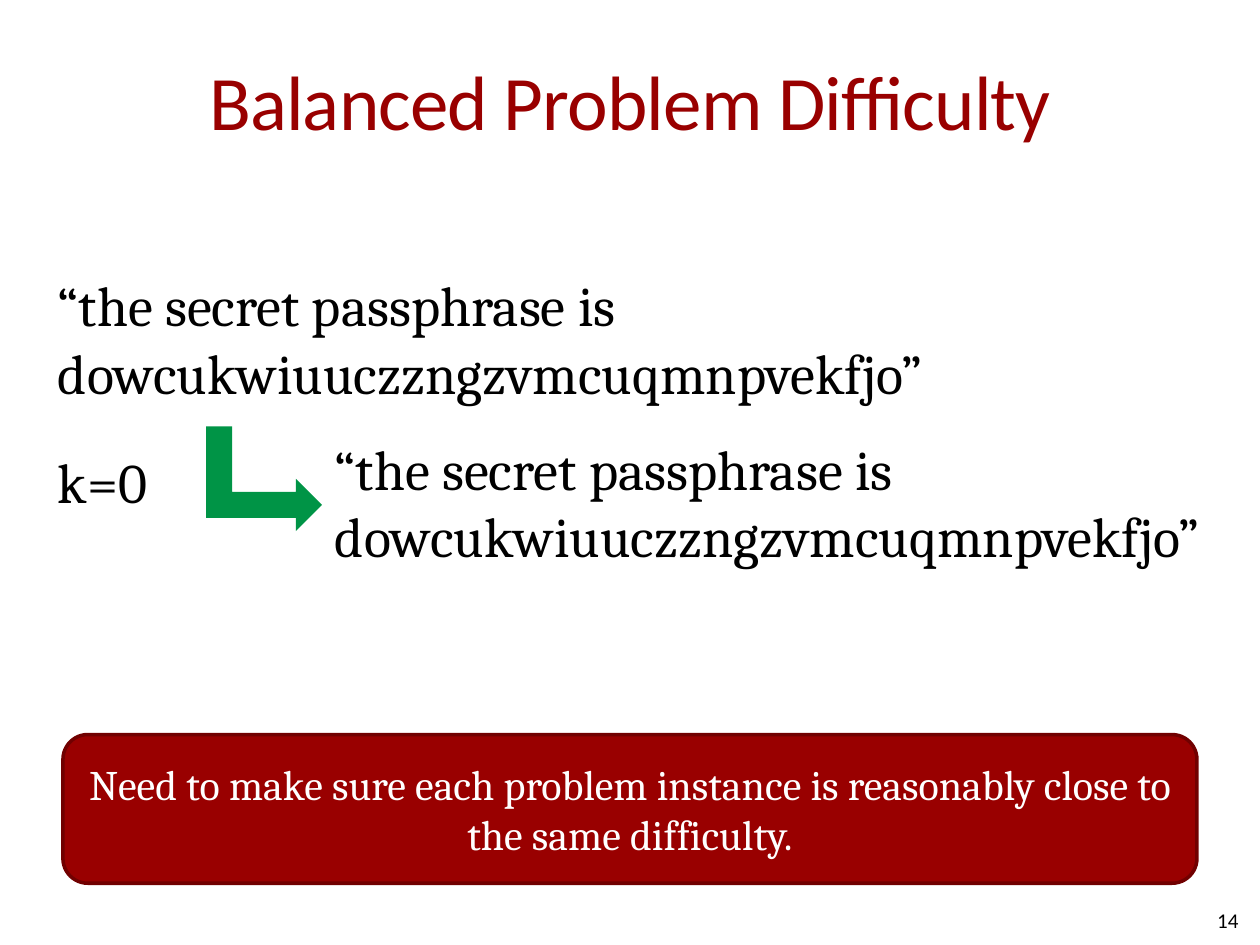
from pptx import Presentation
from pptx.dml.color import RGBColor
from pptx.enum.shapes import MSO_SHAPE as Shape
from pptx.enum.text import MSO_ANCHOR as Anchor, MSO_AUTO_SIZE as AutoSize, PP_ALIGN as Align
from pptx.util import Pt

TITLE = "Balanced Problem Difficulty"
PASSPHRASE = "“the secret passphrase is dowcukwiuuczzngzvmcuqmnpvekfjo”"
SHIFT = "k=0"
TAKEAWAY = "Need to make sure each problem instance is reasonably close to the same difficulty."
PAGE_NUMBER = "14"

RED, DARK_RED, GREEN = "990000", "710000", "009446"
BLACK, WHITE = "000000", "FFFFFF"

# left, top, width, height in points
TITLE_BOX = (36, 12.24, 648, 90)
PLAIN_BOX = (33.12, 154.8, 540, 77.76)
SHIFT_BOX = (33.12, 255.6, 52.56, 38.88)
SHIFTED_BOX = (184.32, 244.8, 533.52, 84.96)
ARROW_BOX = (120.96, 240.48, 59.76, 66.24)
TAKEAWAY_BOX = (36, 419.76, 648, 84.96)
PAGE_BOX = (540, 511.2, 167.76, 28.8)


def points(box):
    return [Pt(length) for length in box]


def rgb(color):
    return RGBColor.from_string(color)


def write(shape, text, size=32, font="Cambria", color=BLACK, align=Align.LEFT,
          anchor=Anchor.TOP, insets=(0, 0, 0, 0), wrap=True, spacing=None):
    """Fill a shape with one formatted paragraph; insets run left, top, right, bottom."""
    frame = shape.text_frame
    frame.auto_size = AutoSize.NONE
    frame.word_wrap = wrap
    frame.vertical_anchor = anchor
    (frame.margin_left, frame.margin_top,
     frame.margin_right, frame.margin_bottom) = points(insets)
    paragraph = frame.paragraphs[0]
    paragraph.alignment = align
    run = paragraph.add_run()
    run.text = text
    run.font.size = Pt(size)
    run.font.name = font
    run.font.color.rgb = rgb(color)
    if spacing is not None:
        run.font._element.set("spc", str(int(spacing * 100)))


def add_filled(slide, kind, box, fill, line=None):
    shape = slide.shapes.add_shape(kind, *points(box))
    shape.shadow.inherit = False
    shape.fill.solid()
    shape.fill.fore_color.rgb = rgb(fill)
    if line:
        shape.line.color.rgb = rgb(line)
        shape.line.width = Pt(2)
    else:
        shape.line.fill.background()
    return shape


def main():
    deck = Presentation()
    deck.slide_width, deck.slide_height = Pt(720), Pt(540)
    slide = deck.slides.add_slide(deck.slide_layouts[5])

    title = slide.shapes.title
    title.left, title.top, title.width, title.height = points(TITLE_BOX)
    write(title, TITLE, size=44, font="Calibri", color=RED, align=Align.CENTER,
          anchor=Anchor.MIDDLE, insets=(0, 3.6, 0, 3.6), spacing=-0.5)

    takeaway = add_filled(slide, Shape.ROUNDED_RECTANGLE, TAKEAWAY_BOX, RED, DARK_RED)
    write(takeaway, TAKEAWAY, size=24, color=WHITE, align=Align.CENTER, anchor=Anchor.MIDDLE)

    arrow = add_filled(slide, Shape.BENT_UP_ARROW, ARROW_BOX, GREEN)
    arrow.rotation = 90

    for box, text, options in [
        (PLAIN_BOX, PASSPHRASE, {}),
        (SHIFTED_BOX, PASSPHRASE, {"insets": (7.2, 3.6, 7.2, 3.6)}),
        (SHIFT_BOX, SHIFT, {"wrap": False}),
        (PAGE_BOX, PAGE_NUMBER, {"size": 12, "font": "Calibri", "align": Align.RIGHT,
                                 "anchor": Anchor.MIDDLE}),
    ]:
        write(slide.shapes.add_textbox(*points(box)), text, **options)

    deck.save("out.pptx")


if __name__ == "__main__":
    main()
